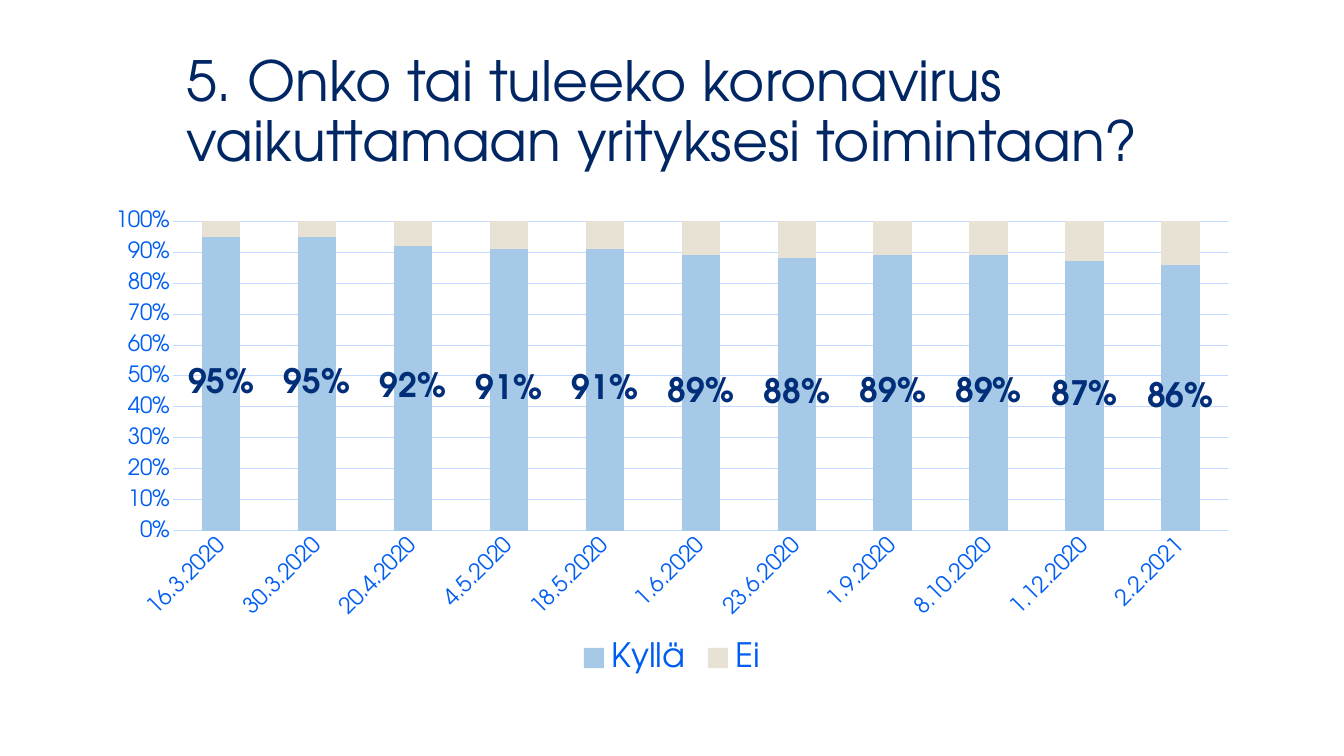
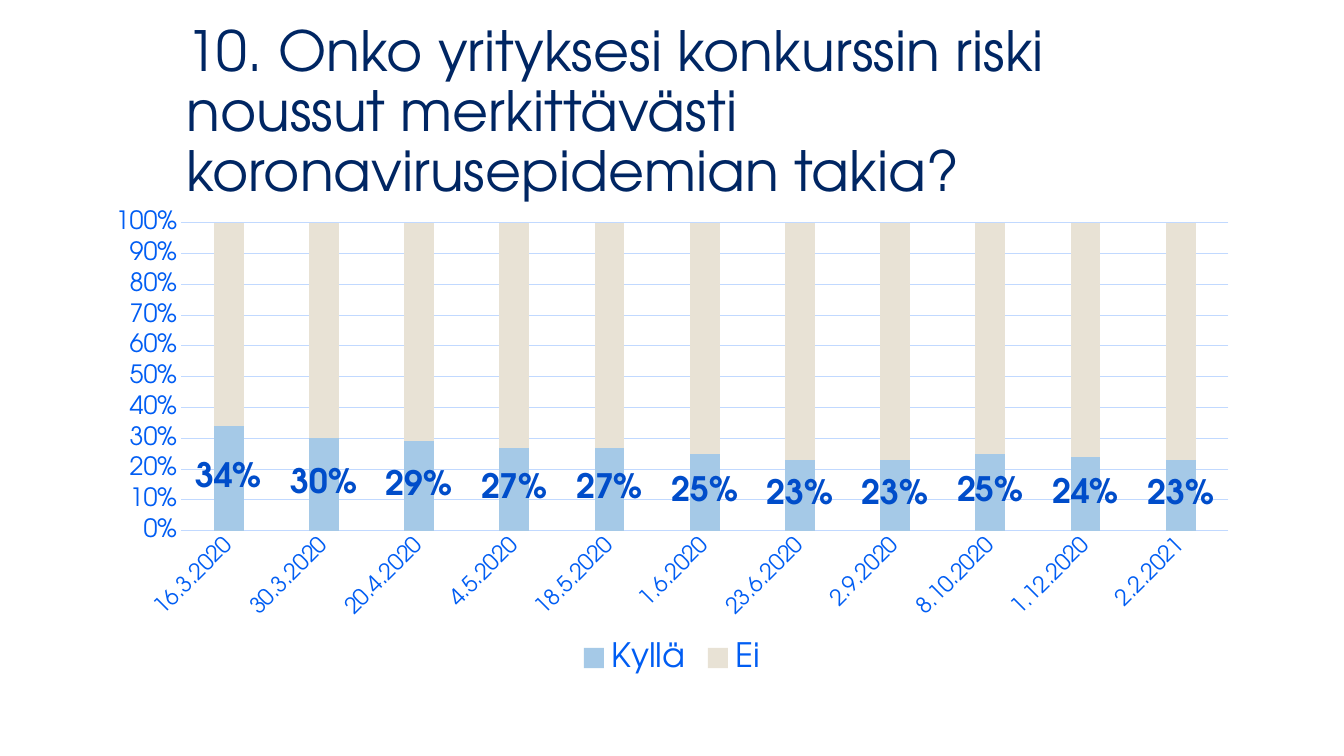
from dataclasses import dataclass

from pptx import Presentation
from pptx.chart.data import CategoryChartData
from pptx.dml.color import RGBColor
from pptx.enum import chart as kinds, text as texts
from pptx.util import Cm, Pt


@dataclass(frozen=True)
class Theme:
    face: str = "TeX Gyre Adventor"
    navy: str = "002663"
    blue: str = "005DF3"
    grid: str = "C1D9FF"
    yes: str = "A5C9E7"
    no: str = "E8E2D5"
    title: float = 39.6
    base: int = 10
    axis: int = 16
    large: int = 24


THEME = Theme()
DATES = ["16.3.2020", "30.3.2020", "20.4.2020", "4.5.2020", "18.5.2020",
         "1.6.2020", "23.6.2020", "1.9.2020", "8.10.2020", "1.12.2020",
         "2.2.2021"]

# One entry per slide: the "Kyllä" shares are whole percentages
POLLS = [
    dict(title="5. Onko tai tuleeko koronavirus vaikuttamaan yrityksesi "
               "toimintaan?",
         dates=DATES,
         shares=[95, 95, 92, 91, 91, 89, 88, 89, 89, 87, 86],
         gap=150, size=THEME.axis, ink="002E78"),
    dict(title="10. Onko yrityksesi konkurssin riski noussut merkittävästi "
               "koronavirusepidemian takia?",
         dates=["2.9.2020" if d == "1.9.2020" else d for d in DATES],
         shares=[34, 30, 29, 27, 27, 25, 23, 23, 25, 24, 23],
         gap=219, size=18, ink="004DCA"),
]


# Text
def style(font, size, color, bold=False):
    font.name = THEME.face
    font.size = Pt(size)
    font.bold = bold
    font.color.rgb = RGBColor.from_string(color)


def write(frame, words, size=THEME.title, color=THEME.navy, bold=False,
          align=texts.PP_ALIGN.LEFT, space=0.9):
    frame.word_wrap = True
    frame.auto_size = texts.MSO_AUTO_SIZE.NONE
    frame.vertical_anchor = texts.MSO_ANCHOR.MIDDLE
    para = frame.paragraphs[0]
    para.alignment = align
    para.line_spacing = space
    run = para.add_run()
    run.text = words
    style(run.font, size, color, bold)


def head(slide, words):
    title = slide.shapes.title
    title.left, title.top = Cm(4.44), Cm(1.02)
    title.width, title.height = Cm(26.9), Cm(3.68)
    write(title.text_frame, words)


# Chart parts
def rule(line):
    line.color.rgb = RGBColor.from_string(THEME.grid)
    line.width = Pt(0.75)


def tune(axis, size):
    axis.major_tick_mark = kinds.XL_TICK_MARK.NONE
    axis.minor_tick_mark = kinds.XL_TICK_MARK.NONE
    style(axis.tick_labels.font, size, THEME.blue)


def scale(axis, size):
    tune(axis, size)
    axis.minimum_scale, axis.maximum_scale = 0, 1
    axis.major_unit = 0.1
    axis.tick_labels.number_format = "0%"
    axis.tick_labels.number_format_is_linked = False
    axis.format.line.fill.background()
    axis.has_major_gridlines = True
    rule(axis.major_gridlines.format.line)


def days(axis):
    tune(axis, THEME.axis)
    rule(axis.format.line)
    axis.has_major_gridlines = False
    # Automatic slant: dates turn when they would overlap
    axis._element.txPr.bodyPr.set("rot", "-60000000")


def label(series, ink):
    marks = series.data_labels
    marks.show_value = True
    marks.number_format = "0%"
    marks.number_format_is_linked = False
    marks.position = kinds.XL_LABEL_POSITION.CENTER
    style(marks.font, THEME.large, ink, bold=True)


def stack(slide, dates, shares, gap, size, ink):
    data = CategoryChartData(number_format="0%")
    data.categories = dates
    data.add_series("Kyllä", [s / 100 for s in shares])
    data.add_series("Ei", [(100 - s) / 100 for s in shares])
    chart = slide.shapes.add_chart(
        kinds.XL_CHART_TYPE.COLUMN_STACKED,
        Cm(2.33), Cm(5.07), Cm(29.21), Cm(12.08), data).chart
    style(chart.font, THEME.base, THEME.navy)
    chart.has_title = False

    # Columns
    plot = chart.plots[0]
    plot.gap_width, plot.overlap = gap, 100
    plot.vary_by_categories = False
    for series, color in zip(plot.series, (THEME.yes, THEME.no)):
        series.format.fill.solid()
        series.format.fill.fore_color.rgb = RGBColor.from_string(color)
    label(plot.series[0], ink)

    # Axes and legend
    days(chart.category_axis)
    scale(chart.value_axis, size)
    chart.has_legend = True
    chart.legend.position = kinds.XL_LEGEND_POSITION.BOTTOM
    chart.legend.include_in_layout = False
    style(chart.legend.font, THEME.large, THEME.blue)


def main():
    deck = Presentation()
    deck.slide_width, deck.slide_height = Cm(33.87), Cm(19.05)
    for poll in POLLS:
        slide = deck.slides.add_slide(deck.slide_layouts[5])
        head(slide, poll["title"])
        stack(slide, poll["dates"], poll["shares"], poll["gap"],
              poll["size"], poll["ink"])
    deck.save("out.pptx")


if __name__ == "__main__":
    main()
